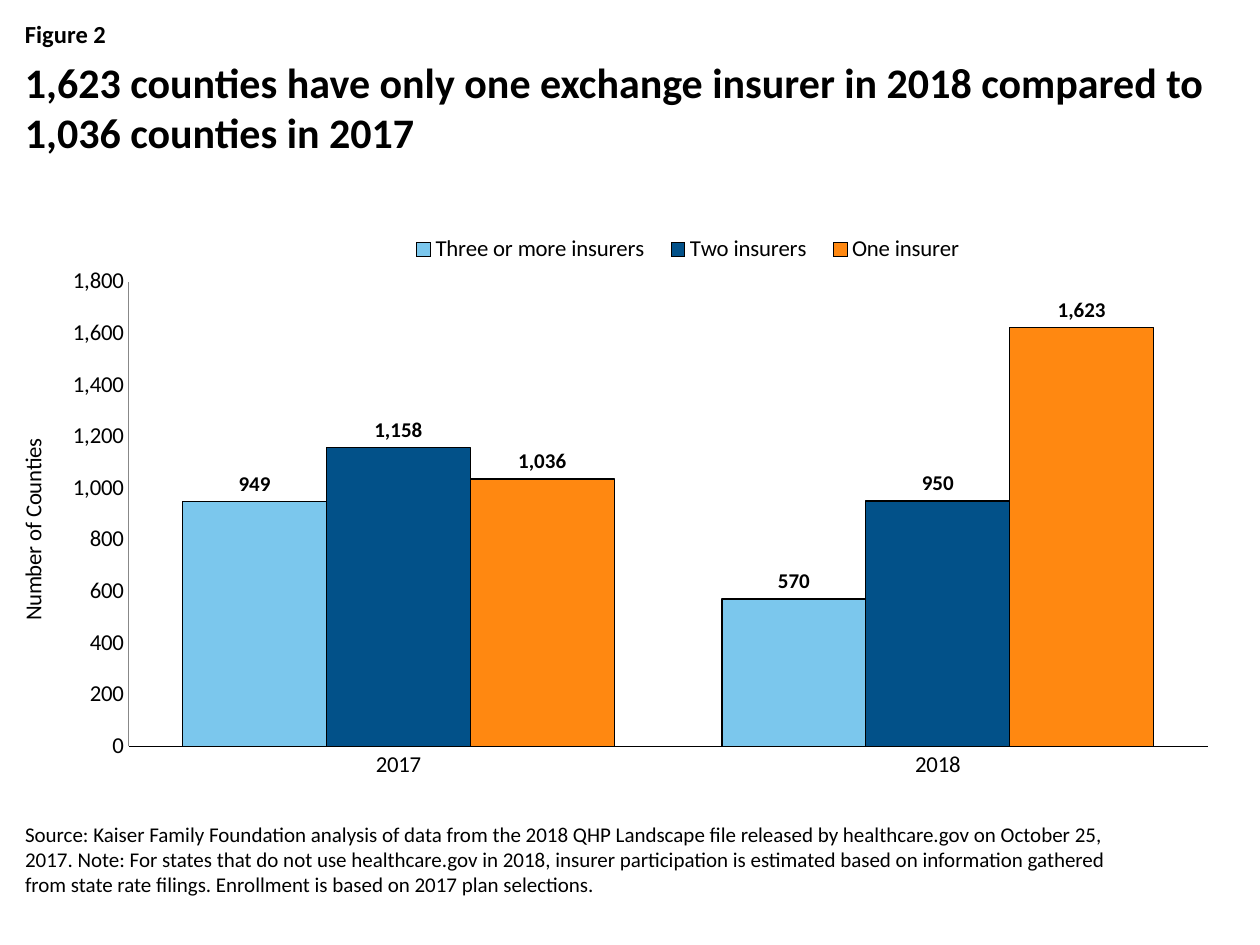
from lxml.etree import SubElement
from pptx import Presentation
from pptx.chart.data import CategoryChartData
from pptx.dml.color import RGBColor
from pptx.enum.chart import (XL_CHART_TYPE, XL_LABEL_POSITION,
                             XL_LEGEND_POSITION, XL_TICK_MARK)
from pptx.enum.text import MSO_ANCHOR
from pptx.oxml.ns import qn
from pptx.util import Inches, Pt

BLACK = RGBColor(0x00, 0x00, 0x00)
GRAY = RGBColor(0x88, 0x88, 0x88)
SKY = RGBColor(0x7B, 0xC7, 0xED)
NAVY = RGBColor(0x02, 0x51, 0x89)
ORANGE = RGBColor(0xFF, 0x88, 0x11)

YEARS = ["2017", "2018"]
SERIES = [
    ("Three or more insurers", (949, 570), SKY),
    ("Two insurers", (1158, 950), NAVY),
    ("One insurer", (1036, 1623), ORANGE),
]
SOURCE = (
    "Source: Kaiser Family Foundation analysis of data from the 2018 QHP "
    "Landscape file released by healthcare.gov on October 25, 2017. Note: "
    "For states that do not use healthcare.gov in 2018, insurer participation "
    "is estimated based on information gathered from state rate filings. "
    "Enrollment is based on 2017 plan selections."
)


def place(chart, tag, index, inner=False, **spots):
    """Fix a chart part at fractions of the chart's size."""
    part = chart.element.xpath(f"//{tag}")[0]
    for old in part.findall(qn("c:layout")):
        part.remove(old)
    layout = SubElement(part, qn("c:layout"))
    part.insert(index, layout)
    manual = SubElement(layout, qn("c:manualLayout"))
    if inner:
        SubElement(manual, qn("c:layoutTarget")).set("val", "inner")
    for key in "xy":
        SubElement(manual, qn(f"c:{key}Mode")).set("val", "edge")
    for key, value in spots.items():
        SubElement(manual, qn(f"c:{key}")).set("val", str(value))


class Deck:
    def __init__(self, slide, face="Calibri", color=BLACK):
        self.slide = slide
        self.face = face
        self.color = color

    def style(self, font, size, bold=False):
        font.name = self.face
        font.size = Pt(size)
        font.bold = bold
        font.color.rgb = self.color

    def edge(self, line, color=BLACK):
        line.color.rgb = color
        line.width = Pt(0.75)

    def text(self, text, box, size, bold=False, anchor=MSO_ANCHOR.TOP):
        frame = self.slide.shapes.add_textbox(*map(Inches, box)).text_frame
        frame.word_wrap = True
        frame.vertical_anchor = anchor
        frame.text = text
        self.style(frame.paragraphs[0].runs[0].font, size, bold)

    def columns(self, box, years, series, title):
        data = CategoryChartData(number_format="#,##0")
        data.categories = years
        for name, values, _ in series:
            data.add_series(name, values)
        chart = self.slide.shapes.add_chart(
            XL_CHART_TYPE.COLUMN_CLUSTERED, *map(Inches, box), data).chart
        self.style(chart.font, 13)
        chart.has_title = False
        chart.has_legend = True
        chart.legend.position = XL_LEGEND_POSITION.TOP
        chart.legend.include_in_layout = False
        self.style(chart.legend.font, 13)

        plot = chart.plots[0]
        plot.gap_width = 75
        plot.overlap = 0
        plot.vary_by_categories = False
        for bars, (_, _, color) in zip(plot.series, series):
            bars.format.fill.solid()
            bars.format.fill.fore_color.rgb = color
            self.edge(bars.format.line)
            labels = bars.data_labels
            labels.show_value = True
            labels.number_format = "#,##0"
            labels.number_format_is_linked = False
            labels.position = XL_LABEL_POSITION.OUTSIDE_END
            self.style(labels.font, 12, True)

        self.axes(chart, title)
        place(chart, "c:plotArea", 0, True, x=0.103, y=0.118, w=0.872, h=0.768)
        place(chart, "c:legend", 1, x=0.32, y=0.03, w=0.47, h=0.07)
        place(chart, "c:valAx/c:title", 1, x=0.01, y=0.37)

    def axes(self, chart, title):
        years, counts = chart.category_axis, chart.value_axis
        for axis, color in ((years, BLACK), (counts, GRAY)):
            axis.major_tick_mark = XL_TICK_MARK.NONE
            axis.minor_tick_mark = XL_TICK_MARK.NONE
            axis.has_major_gridlines = False
            self.edge(axis.format.line, color)
            self.style(axis.tick_labels.font, 13)
        counts.minimum_scale = 0
        counts.maximum_scale = 1800
        counts.major_unit = 200
        counts.tick_labels.number_format = "#,##0"
        counts.tick_labels.number_format_is_linked = False
        frame = counts.axis_title.text_frame
        frame.text = title
        self.style(frame.paragraphs[0].runs[0].font, 13)


def main():
    prs = Presentation()
    prs.slide_width = Inches(10)
    prs.slide_height = Inches(7.5)
    deck = Deck(prs.slides.add_slide(prs.slide_layouts[6]))
    deck.text("Figure 2", (0.1, 0.1, 9.8, 0.34), 14, True)
    deck.text("1,623 counties have only one exchange insurer in 2018 "
              "compared to 1,036 counties in 2017",
              (0.1, 0.4, 9.8, 1), 24, True)
    deck.columns((0.01, 1.67, 9.82, 4.8), YEARS, SERIES, "Number of Counties")
    deck.text(SOURCE, (0.1, 6.4, 8.98, 0.77), 12, anchor=MSO_ANCHOR.BOTTOM)
    prs.save("out.pptx")


if __name__ == "__main__":
    main()
